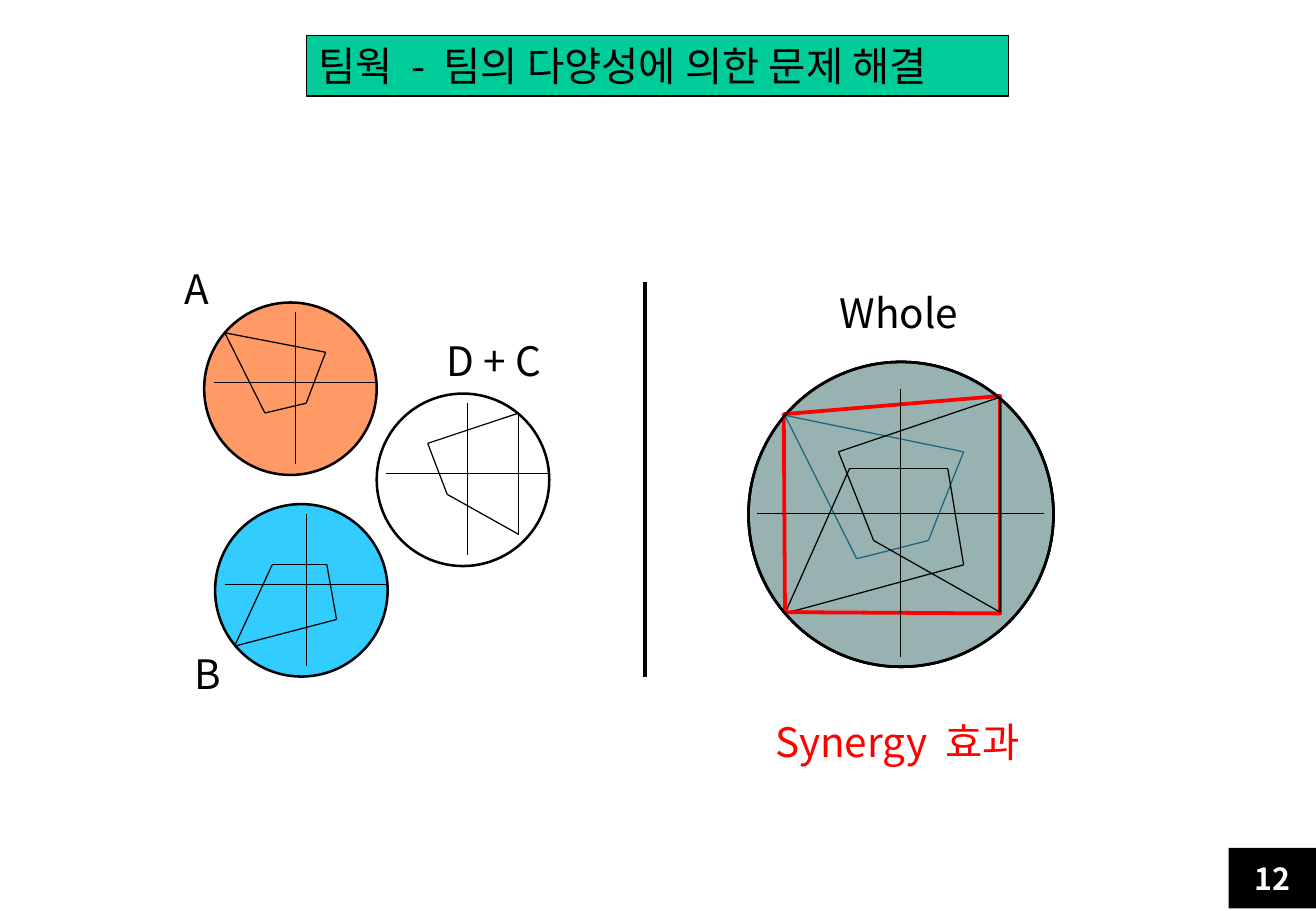
from dataclasses import dataclass
from itertools import pairwise

from lxml.etree import SubElement
from pptx import Presentation
from pptx.dml.color import RGBColor
from pptx.enum.shapes import MSO_CONNECTOR, MSO_SHAPE
from pptx.enum.text import MSO_ANCHOR, MSO_AUTO_SIZE, PP_ALIGN
from pptx.oxml.ns import qn
from pptx.util import Pt

PX = 9144


@dataclass(frozen=True)
class Theme:
    font: str = "Noto Sans CJK KR"
    ink: str = "000000"
    paper: str = "FFFFFF"
    banner: str = "00CC99"
    orange: str = "FF9966"
    blue: str = "33CCFF"
    red: str = "FF0000"
    heading: int = 24
    number: int = 18
    wide_space: int = 540
    thin: float = 0.75
    medium: float = 1.5
    thick: float = 2.25


class Board:
    def __init__(self, slide, theme):
        self.slide = slide
        self.theme = theme

    def place(self, shape, left, top, width, height):
        shape.left, shape.top = left * PX, top * PX
        shape.width, shape.height = width * PX, height * PX

    def paint(self, shape, fill=None, line=None, weight=0.75):
        if fill:
            shape.fill.solid()
            shape.fill.fore_color.rgb = RGBColor.from_string(fill)
        else:
            shape.fill.background()
        if line:
            shape.line.color.rgb = RGBColor.from_string(line)
            shape.line.width = Pt(weight)
        else:
            shape.line.fill.background()

    def set_text(self, shape, parts, color, size, align=PP_ALIGN.LEFT, bold=False, wrap=False):
        frame = shape.text_frame
        frame.auto_size = MSO_AUTO_SIZE.NONE
        frame.word_wrap = wrap
        frame.vertical_anchor = MSO_ANCHOR.MIDDLE
        paragraph = frame.paragraphs[0]
        paragraph.alignment = align
        font = paragraph.font
        font.name, font.size, font.bold = self.theme.font, Pt(size), bold
        font.color.rgb = RGBColor.from_string(color)
        SubElement(font._element, qn("a:ea"), typeface=self.theme.font)
        for index, part in enumerate(parts):
            if index:
                gap = paragraph.add_run()
                gap.text = " "
                gap.font._element.set("spc", str(self.theme.wide_space))
            paragraph.add_run().text = part

    def title(self, box, parts):
        banner = self.slide.shapes.title
        self.place(banner, *box)
        self.paint(banner, self.theme.banner, self.theme.ink, self.theme.thin)
        self.set_text(banner, parts, self.theme.ink, self.theme.heading, wrap=True)

    def page_number(self, box, number):
        corner = self.slide.shapes.add_shape(MSO_SHAPE.RECTANGLE, *(n * PX for n in box))
        corner.shadow.inherit = False
        self.paint(corner, self.theme.ink)
        self.set_text(corner, [number], self.theme.paper, self.theme.number, PP_ALIGN.CENTER, True)

    def label(self, box, parts, color):
        caption = self.slide.shapes.add_textbox(*(n * PX for n in box))
        self.set_text(caption, parts, color, self.theme.heading)

    def circle(self, shapes, left, top, size, fill=None, alpha=None):
        disc = shapes.add_shape(MSO_SHAPE.OVAL, left * PX, top * PX, size * PX, size * PX)
        disc.shadow.inherit = False
        self.paint(disc, fill, self.theme.ink, self.theme.medium)
        if alpha:
            tint = disc._element.spPr.find(qn("a:solidFill"))[0]
            SubElement(tint, qn("a:alpha"), val=str(alpha * 1000))

    def line(self, shapes, start, end, weight):
        ends = (n * PX for n in (*start, *end))
        stroke = shapes.add_connector(MSO_CONNECTOR.STRAIGHT, *ends)
        stroke.line.color.rgb = RGBColor.from_string(self.theme.ink)
        stroke.line.width = Pt(weight)
        SubElement(stroke._element.spPr, qn("a:effectLst"))

    def loop(self, shapes, corners):
        for start, end in pairwise([*corners, corners[0]]):
            self.line(shapes, start, end, self.theme.thin)

    def member(self, left, top, fill, corners):
        shapes = self.slide.shapes.add_group_shape().shapes
        self.circle(shapes, left, top, 142, fill)
        self.line(shapes, (left + 8, top + 66), (left + 142, top + 66), self.theme.thin)
        self.line(shapes, (left + 75, top + 8), (left + 75, top + 133), self.theme.thin)
        self.loop(shapes, corners)

    def outline(self, corners, color):
        builder = self.slide.shapes.build_freeform(*corners[0], scale=PX)
        builder.add_line_segments(corners[1:], close=True)
        border = builder.convert_to_shape()
        border.shadow.inherit = False
        self.paint(border, None, color, self.theme.thick)


def main():
    theme = Theme()
    deck = Presentation()
    deck.slide_width, deck.slide_height = 1083 * PX, 750 * PX
    slide = deck.slides.add_slide(deck.slide_layouts[5])
    board = Board(slide, theme)
    shapes = slide.shapes

    board.title((252, 29, 578, 50), ["팀웍", "-", "팀의 다양성에 의한 문제 해결"])
    board.page_number((1011, 698, 72, 50), "12")

    members = [
        (168, 249, theme.orange, [(185, 274), (218, 340), (252, 332), (268, 290)]),
        (177, 415, theme.blue, [(193, 532), (224, 465), (269, 465), (277, 510)]),
        (310, 324, None, [(368, 407), (352, 365), (427, 340), (427, 440)]),
    ]
    for member in members:
        board.member(*member)

    labels = [
        ((358, 271, 104, 51), ["D + C"], theme.ink),
        ((142, 212, 40, 51), ["A"], theme.ink),
        ((150, 529, 41, 51), ["B"], theme.ink),
        ((681, 232, 121, 50), ["Whole"], theme.ink),
        ((628, 585, 226, 50), ["Synergy", "효과"], theme.red),
    ]
    for label in labels:
        board.label(*label)

    board.line(shapes, (531, 232), (531, 557), theme.thick)

    whole = (616, 298, 251)
    board.circle(shapes, *whole, theme.orange)
    board.loop(shapes, [(646, 342), (705, 460), (764, 445), (793, 372)])
    board.circle(shapes, *whole, theme.blue, 50)
    board.loop(shapes, [(646, 505), (699, 386), (780, 386), (793, 465)])
    board.outline([(645, 341), (646, 504), (823, 505), (823, 326)], theme.red)
    board.circle(shapes, *whole)
    board.line(shapes, (623, 423), (859, 423), theme.thin)
    board.line(shapes, (741, 320), (741, 541), theme.thin)
    board.loop(shapes, [(719, 445), (690, 372), (823, 327), (823, 504)])

    deck.save("out.pptx")


if __name__ == "__main__":
    main()
